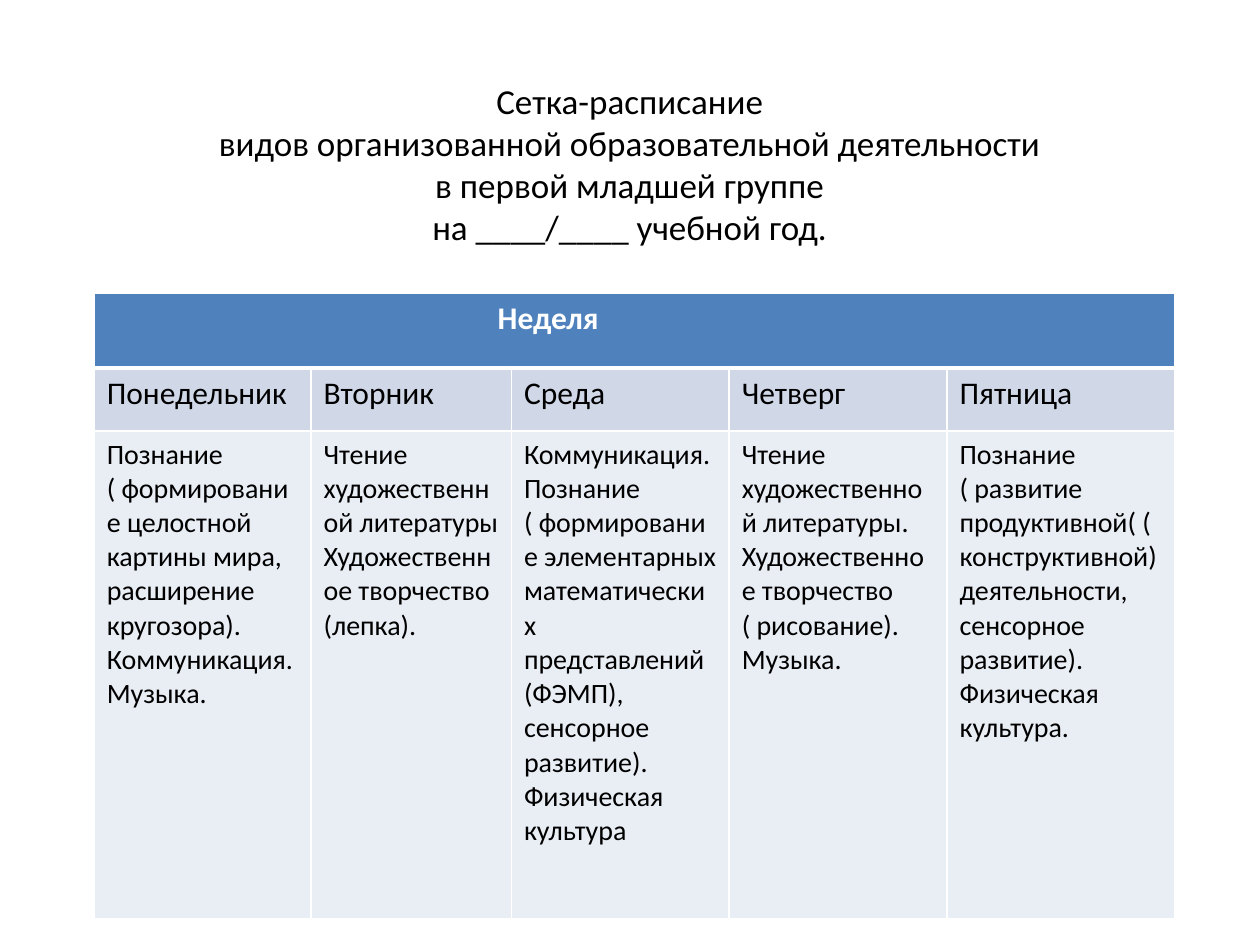
from typing import NamedTuple

from lxml.etree import SubElement
from pptx import Presentation
from pptx.dml.color import RGBColor
from pptx.enum.text import MSO_ANCHOR, MSO_AUTO_SIZE, PP_ALIGN as Align
from pptx.oxml.ns import qn
from pptx.util import Cm, Length, Pt

BLACK = RGBColor(0x00, 0x00, 0x00)
WHITE = RGBColor(0xFF, 0xFF, 0xFF)
HEADER_BLUE = RGBColor(0x4F, 0x81, 0xBD)
DAY_BLUE = RGBColor(0xD0, 0xD8, 0xE8)
LESSON_BLUE = RGBColor(0xE9, 0xED, 0xF4)
FONT = "Calibri"


class Day(NamedTuple):
    name: str
    width: Length
    lessons: str


HEADING = (
    "Сетка-расписание\v"
    "видов организованной образовательной деятельности\v"
    "в первой младшей группе\v"
    "на ____/____ учебной год."
)
WEEK = [
    Day("Понедельник", Cm(4.37),
        "Познание ( формирование целостной картины мира, расширение кругозора).\n"
        "Коммуникация.\nМузыка."),
    Day("Вторник", Cm(4.04),
        "Чтение художественной литературы\nХудожественное творчество (лепка)."),
    Day("Среда", Cm(4.39),
        "Коммуникация.\n"
        "Познание ( формирование элементарных математических представлений (ФЭМП), "
        "сенсорное развитие).\nФизическая культура"),
    Day("Четверг", Cm(4.39),
        "Чтение художественной литературы.\n"
        "Художественное творчество ( рисование).\nМузыка."),
    Day("Пятница", Cm(4.6),
        "Познание ( развитие продуктивной( (конструктивной) деятельности, "
        "сенсорное развитие).\nФизическая культура."),
]
ROW_HEIGHTS = [Cm(1.5), Cm(1.27), Cm(9.83)]


def write(frame, text: str, *, size: int, color: RGBColor = BLACK,
          bold: bool = False, align: Align = Align.LEFT, indent: Length = Cm(0)) -> None:
    frame.text = text
    for paragraph in frame.paragraphs:
        paragraph.alignment = align
        if indent:
            paragraph._p.get_or_add_pPr().set("marL", str(int(indent)))
        for run in paragraph.runs:
            font = run.font
            font.name, font.size, font.bold = FONT, Pt(size), bold
            font.color.rgb = color


def style_cell(cell, fill: RGBColor, top: int = 1, bottom: int = 1) -> None:
    """Give the cell white borders, widths in points, and a solid fill."""
    properties = cell._tc.get_or_add_tcPr()
    for side, width in (("L", 1), ("R", 1), ("T", top), ("B", bottom)):
        line = SubElement(properties, qn(f"a:ln{side}"), w=str(int(Pt(width))))
        solid = SubElement(line, qn("a:solidFill"))
        SubElement(solid, qn("a:srgbClr"), val=str(WHITE))
    cell.fill.solid()
    cell.fill.fore_color.rgb = fill


def add_heading(slide) -> None:
    title = slide.shapes.title
    title.left, title.top, title.width, title.height = Cm(1.9), Cm(1.32), Cm(21.59), Cm(4.8)
    frame = title.text_frame
    frame.auto_size = MSO_AUTO_SIZE.NONE
    frame.vertical_anchor = MSO_ANCHOR.MIDDLE
    frame.margin_bottom = Cm(0.97)
    write(frame, HEADING, size=20, align=Align.CENTER)


def add_schedule(slide) -> None:
    table = slide.shapes.add_table(
        len(ROW_HEIGHTS), len(WEEK), Cm(1.9), Cm(5.92),
        sum(day.width for day in WEEK), sum(ROW_HEIGHTS)).table
    for row, height in zip(table.rows, ROW_HEIGHTS):
        row.height = height
    for column, day in enumerate(WEEK):
        table.columns[column].width = day.width
        header, name, lessons = (table.cell(row, column) for row in range(3))
        style_cell(header, HEADER_BLUE, bottom=3)
        style_cell(name, DAY_BLUE, top=3)
        style_cell(lessons, LESSON_BLUE)
        write(name.text_frame, day.name, size=18)
        write(lessons.text_frame, day.lessons, size=16)
    week = table.cell(0, 0)
    week.merge(table.cell(0, len(WEEK) - 1))
    write(week.text_frame, "Неделя", size=18, color=WHITE, bold=True, indent=Cm(7.88))


def main() -> None:
    presentation = Presentation()
    presentation.slide_width, presentation.slide_height = Cm(25.4), Cm(19.05)
    slide = presentation.slides.add_slide(presentation.slide_layouts[5])
    add_heading(slide)
    add_schedule(slide)
    presentation.save("out.pptx")


if __name__ == "__main__":
    main()
